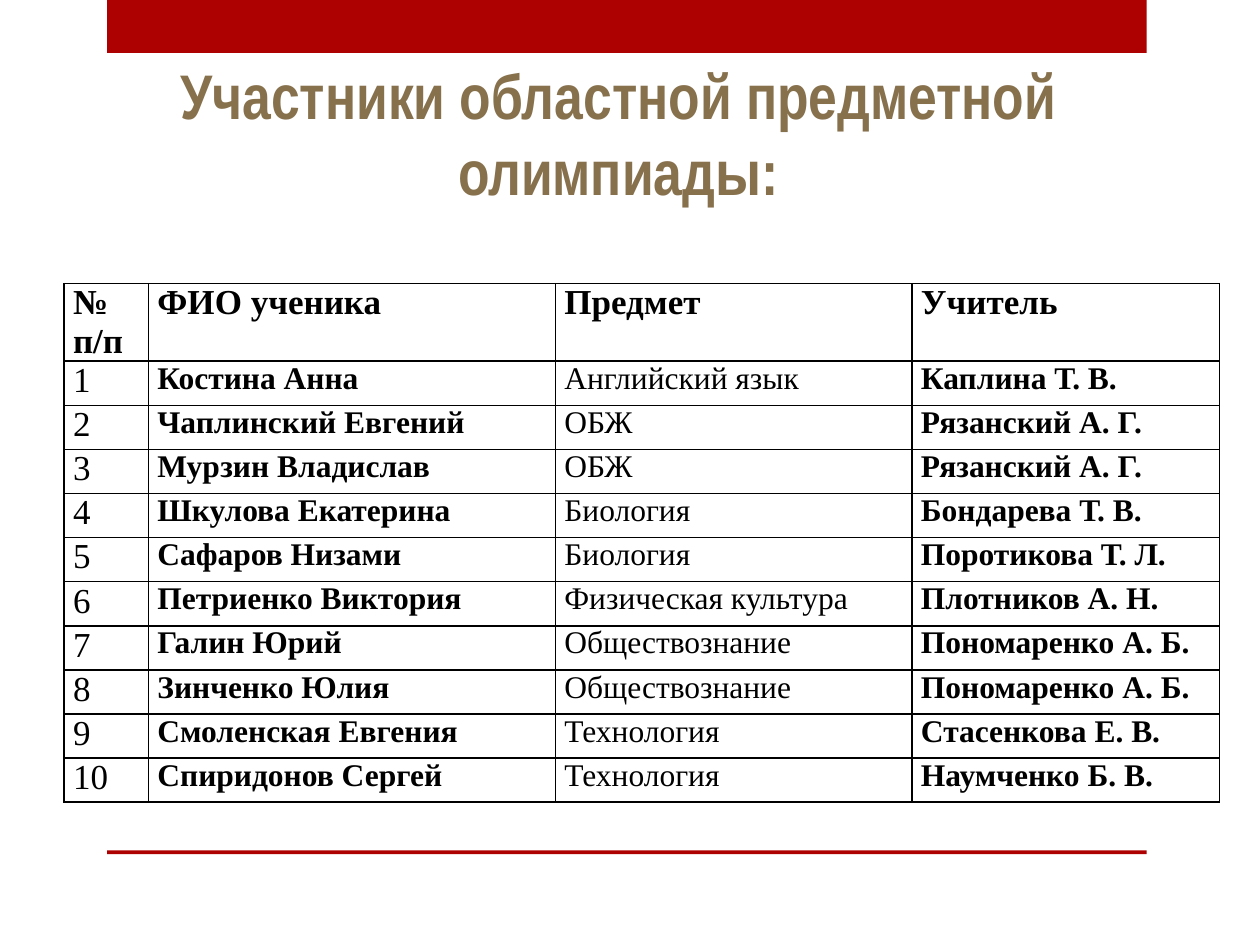
import typing

import lxml.etree
import pptx
import pptx.dml.color
import pptx.enum.shapes
import pptx.enum.text
import pptx.oxml.ns
import pptx.util

WIDE, HIGH = 10, 7.5
COLORS = {"red": "AD0101", "tan": "87714D", "ink": "000000", "paper": "FFFFFF"}
ALIGN = pptx.enum.text.PP_ALIGN
ANCHOR = pptx.enum.text.MSO_ANCHOR
TITLE = "Участники областной предметной олимпиады:"
COLS = (0.67, 3.23, 2.83, 2.44)
HEAD_ROW, BODY_ROW = 0.61, 0.35
HEADS = ("№ п/п", "ФИО ученика", "Предмет", "Учитель")


class Box(typing.NamedTuple):
    """Left, top, width and height as shares of the slide."""
    left: float
    top: float
    width: float
    height: float

    def place(self) -> list[int]:
        return [pptx.util.Inches(share * size)
                for share, size in zip(self, (WIDE, HIGH) * 2)]


class Entry(typing.NamedTuple):
    pupil: str
    topic: str
    tutor: str


class Style(typing.NamedTuple):
    size: int
    bold: bool
    color: str = "ink"
    face: str = "Times New Roman"


BARS = (Box(0.085, 0, 0.825, 0.056), Box(0.085, 0.9, 0.825, 0.004))
TITLE_BOX = Box(0.13, 0.07, 0.742, 0.157)
HEAD = Style(20, True)
BODY = (Style(20, False), Style(18, True), Style(18, False), Style(18, True))
ENTRIES = (
    Entry("Костина Анна", "Английский язык", "Каплина Т. В."),
    Entry("Чаплинский Евгений", "ОБЖ", "Рязанский А. Г."),
    Entry("Мурзин Владислав", "ОБЖ", "Рязанский А. Г."),
    Entry("Шкулова Екатерина", "Биология", "Бондарева Т. В."),
    Entry("Сафаров Низами", "Биология", "Поротикова Т. Л."),
    Entry("Петриенко Виктория", "Физическая культура", "Плотников А. Н."),
    Entry("Галин Юрий", "Обществознание", "Пономаренко А. Б."),
    Entry("Зинченко Юлия", "Обществознание", "Пономаренко А. Б."),
    Entry("Смоленская Евгения", "Технология", "Стасенкова Е. В."),
    Entry("Спиридонов Сергей", "Технология", "Наумченко Б. В."),
)


def apply(item: typing.Any, form: dict[str, typing.Any]) -> None:
    for name, value in form.items():
        setattr(item, name, value)


def tint(name: str) -> pptx.dml.color.RGBColor:
    return pptx.dml.color.RGBColor.from_string(COLORS[name])


def write(frame: typing.Any, text: str, style: Style, align: ALIGN) -> None:
    para = frame.paragraphs[0]
    para.alignment = align
    run = para.add_run()
    run.text = text
    apply(run.font, {"name": style.face, "size": pptx.util.Pt(style.size),
                     "bold": style.bold})
    run.font.color.rgb = tint(style.color)


def rule(cell: typing.Any) -> None:
    """Draw a 1 pt line on each side of the cell."""
    props = cell._tc.get_or_add_tcPr()
    name = pptx.oxml.ns.qn
    for spot, side in enumerate(("a:lnL", "a:lnR", "a:lnT", "a:lnB")):
        line = lxml.etree.Element(name(side), w=str(pptx.util.Pt(1)))
        fill = lxml.etree.SubElement(line, name("a:solidFill"))
        lxml.etree.SubElement(fill, name("a:srgbClr"), val=COLORS["ink"])
        props.insert(spot, line)


def draw_bar(slide: typing.Any, box: Box) -> None:
    bar = slide.shapes.add_shape(
        pptx.enum.shapes.MSO_SHAPE.RECTANGLE, *box.place())
    bar.shadow.inherit = False
    bar.fill.solid()
    bar.fill.fore_color.rgb = tint("red")
    bar.line.fill.background()


def draw_title(slide: typing.Any) -> None:
    title = slide.shapes.title
    apply(title, dict(zip(("left", "top", "width", "height"),
                          TITLE_BOX.place())))
    apply(title.text_frame, {
        "word_wrap": True, "vertical_anchor": ANCHOR.BOTTOM,
        "auto_size": pptx.enum.text.MSO_AUTO_SIZE.NONE,
        "margin_left": pptx.util.Inches(0.05),
        "margin_right": pptx.util.Inches(0.25)})
    write(title.text_frame, TITLE, Style(36, True, "tan", "Arial Narrow"),
          ALIGN.CENTER)


def draw_cell(cell: typing.Any, text: str, style: Style) -> None:
    side = pptx.util.Inches(0.07)
    apply(cell, {"margin_left": side, "margin_right": side, "margin_top": 0,
                 "margin_bottom": 0, "vertical_anchor": ANCHOR.TOP})
    cell.fill.solid()
    cell.fill.fore_color.rgb = tint("paper")
    rule(cell)
    write(cell.text_frame, text, style, ALIGN.JUSTIFY)


def draw_table(slide: typing.Any) -> None:
    rows = [HEADS] + [(str(num), *entry)
                      for num, entry in enumerate(ENTRIES, 1)]
    high = HEAD_ROW + BODY_ROW * len(ENTRIES)
    box = Box(0.051, 0.3, sum(COLS) / WIDE, high / HIGH)
    table = slide.shapes.add_table(len(rows), len(COLS), *box.place()).table
    for col, width in zip(table.columns, COLS):
        col.width = pptx.util.Inches(width)
    for r, texts in enumerate(rows):
        table.rows[r].height = pptx.util.Inches(BODY_ROW if r else HEAD_ROW)
        for c, text in enumerate(texts):
            draw_cell(table.cell(r, c), text, BODY[c] if r else HEAD)


def main() -> None:
    deck = pptx.Presentation()
    apply(deck, {"slide_width": pptx.util.Inches(WIDE),
                 "slide_height": pptx.util.Inches(HIGH)})
    slide = deck.slides.add_slide(deck.slide_layouts[5])
    for box in BARS:
        draw_bar(slide, box)
    draw_title(slide)
    draw_table(slide)
    deck.save("out.pptx")


if __name__ == "__main__":
    main()
